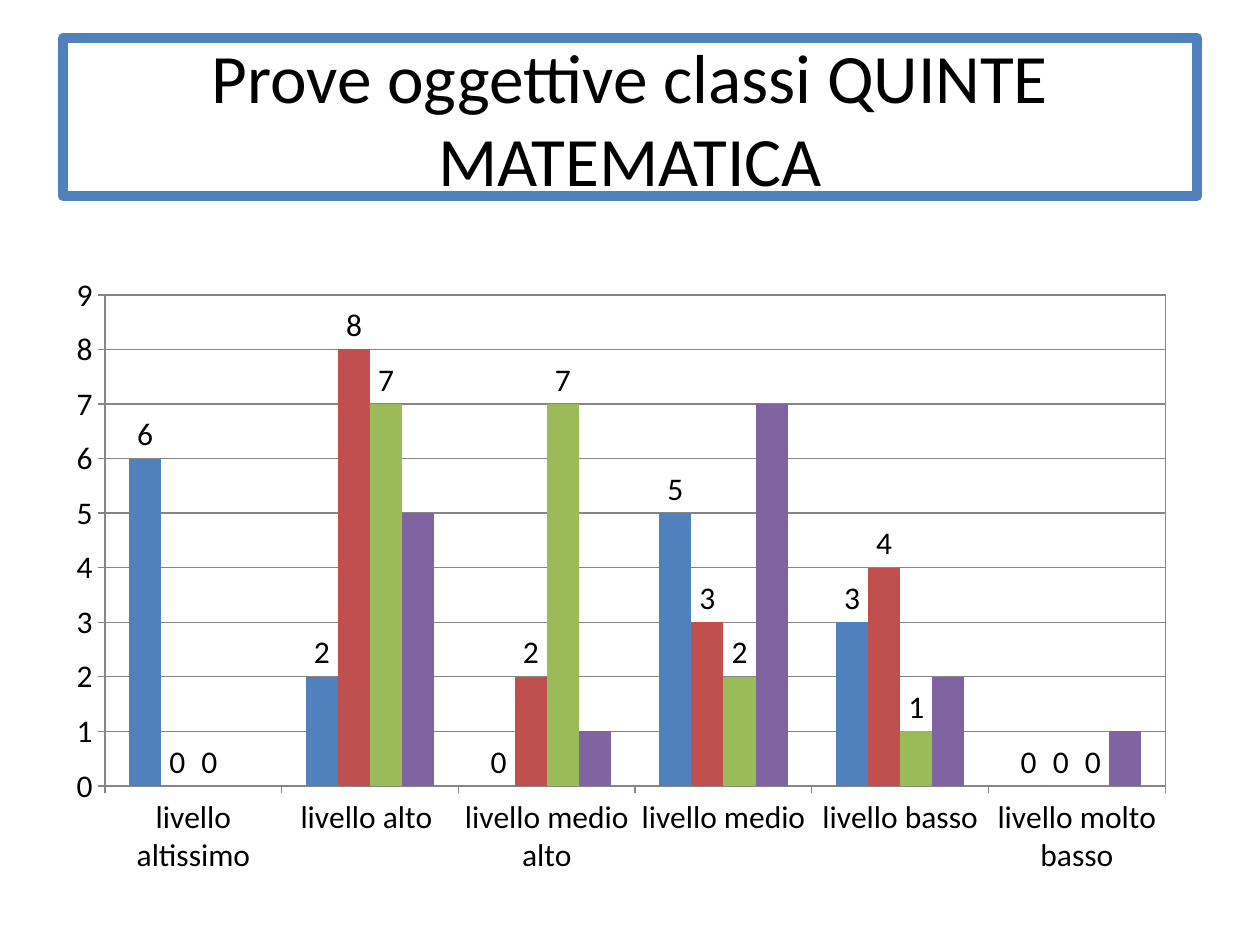
from dataclasses import dataclass

from pptx import Presentation
from pptx import util as u
from pptx.chart.data import CategoryChartData
from pptx.dml.color import RGBColor
from pptx.enum import chart as ch, text
from pptx.oxml import parse_xml
from pptx.oxml.ns import nsdecls, qn

PX_PER_INCH = 126


@dataclass(frozen=True)
class Theme:
    font: str = "Calibri"
    ink: str = "000000"
    frame: str = "4F81BD"
    grid: str = "868686"
    levels: tuple = ("4F81BD", "C0504D", "9BBB59", "8064A2")
    title_size: float = 39.6
    chart_size: int = 18
    frame_width: int = 6


THEME = Theme()
LEVELS = ["livello altissimo", "livello alto ", "livello medio alto",
          "livello medio", "livello basso", "livello molto basso"]
RESULTS = {
    "Series 1": (6, 2, 0, 5, 3, 0),
    "Series 2": (0, 8, 2, 3, 4, 0),
    "Series 3": (0, 7, 7, 2, 1, 0),
    "Series 4": (0, 5, 1, 7, 2, 1),
}
UNLABELLED = "Series 4"


def px(length):
    return u.Emu(round(length * 914400 / PX_PER_INCH))


def rgb(code):
    return RGBColor.from_string(code)


def style_font(font, size):
    font.name = THEME.font
    font.size = u.Pt(size)
    font.color.rgb = rgb(THEME.ink)


def place_heading(slide, box):
    heading = slide.shapes.title
    heading.left, heading.top, heading.width, heading.height = map(px, box)
    heading.line.color.rgb = rgb(THEME.frame)
    heading.line.width = u.Pt(THEME.frame_width)
    frame = heading.text_frame
    frame.text = "Prove oggettive classi QUINTE\vMATEMATICA"
    frame.word_wrap = True
    frame.auto_size = text.MSO_AUTO_SIZE.NONE
    frame.vertical_anchor = text.MSO_ANCHOR.MIDDLE
    wording = frame.paragraphs[0]
    wording.alignment = text.PP_ALIGN.CENTER
    style_font(wording.font, THEME.title_size)


def frame_plot(chart, box, plot_box):
    plot_area = chart._chartSpace.chart.plotArea
    for layout in plot_area.findall(qn("c:layout")):
        plot_area.remove(layout)
    _, _, width, height = box
    shares = zip("xywh", plot_box, (width, height) * 2)
    places = "".join(f'<c:{side} val="{length / whole:.3f}"/>' for side, length, whole in shares)
    plot_area.insert(0, parse_xml(
        f'<c:layout {nsdecls("c")}><c:manualLayout><c:layoutTarget val="inner"/>'
        f'<c:xMode val="edge"/><c:yMode val="edge"/>{places}</c:manualLayout></c:layout>'))
    plot_area.append(parse_xml(
        f'<c:spPr {nsdecls("c", "a")}><a:noFill/><a:ln w="9525"><a:solidFill>'
        f'<a:srgbClr val="{THEME.grid}"/></a:solidFill></a:ln></c:spPr>'))


def style_axes(chart):
    scores = chart.value_axis
    scores.minimum_scale, scores.maximum_scale, scores.major_unit = 0, 9, 1
    scores.has_major_gridlines = True
    for line in (scores.major_gridlines.format.line, scores.format.line,
                 chart.category_axis.format.line):
        line.color.rgb = rgb(THEME.grid)
        line.width = u.Pt(0.75)
    for axis in (scores, chart.category_axis):
        axis.major_tick_mark = ch.XL_TICK_MARK.OUTSIDE
        axis.minor_tick_mark = ch.XL_TICK_MARK.NONE


def place_results(slide, box, plot_box):
    data = CategoryChartData()
    data.categories = LEVELS
    for name, scores in RESULTS.items():
        data.add_series(name, scores)
    chart = slide.shapes.add_chart(
        ch.XL_CHART_TYPE.COLUMN_CLUSTERED, *map(px, box), data).chart
    chart.has_title = False
    chart.has_legend = False
    style_font(chart.font, THEME.chart_size)
    style_axes(chart)
    bars = chart.plots[0]
    bars.gap_width, bars.overlap, bars.vary_by_categories = 150, 0, False
    for series, color in zip(bars.series, THEME.levels):
        series.format.fill.solid()
        series.format.fill.fore_color.rgb = rgb(color)
        if series.name != UNLABELLED:
            series.data_labels.show_value = True
            series.data_labels.position = ch.XL_LABEL_POSITION.OUTSIDE_END
    frame_plot(chart, box, plot_box)


def main():
    deck = Presentation()
    deck.slide_width, deck.slide_height = u.Inches(10), u.Inches(7.5)
    slide = deck.slides.add_slide(deck.slide_layouts[5])
    place_heading(slide, (63, 38, 1134, 158))
    place_results(slide, (54, 265, 1134, 624), (51, 30, 1060, 491))
    deck.save("out.pptx")


if __name__ == "__main__":
    main()
